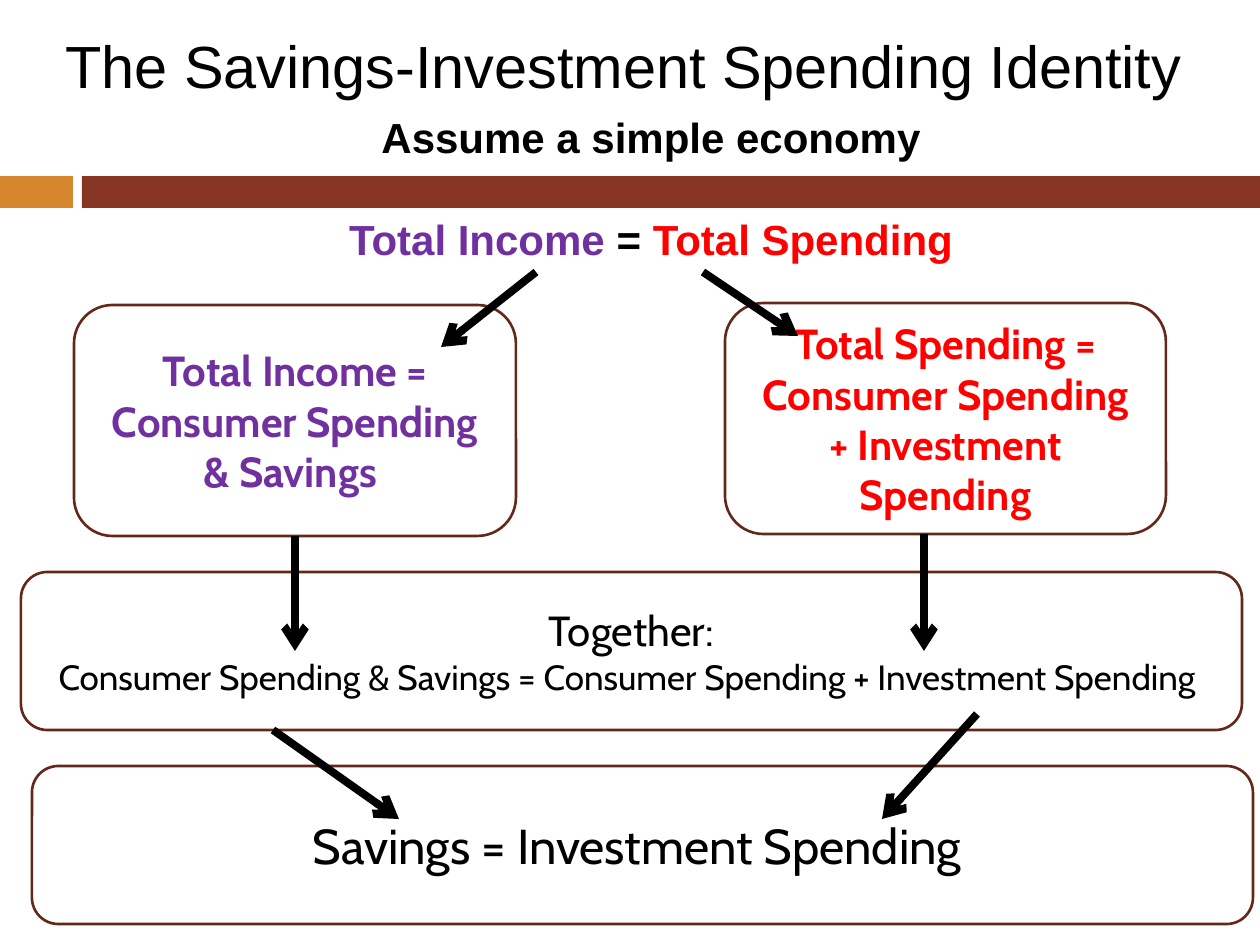
from lxml import etree
from pptx import Presentation
from pptx import util as u
from pptx.dml.color import RGBColor
from pptx.enum import shapes, text
from pptx.oxml.ns import qn

PX = 914400 / 126
COLORS = {"orange": "D6862D", "brown": "873624", "border": "64281B",
          "black": "000000", "purple": "7030A0", "red": "FF0000"}


def px(*values):
    """Turn pixel lengths into EMU."""
    return [u.Emu(round(v * PX)) for v in values]


def rgb(name):
    """Look up a named colour."""
    return RGBColor.from_string(COLORS[name])


def add_bar(s, box, color):
    """Add a plain filled band."""
    sp = s.shapes.add_shape(shapes.MSO_SHAPE.RECTANGLE, *px(*box))
    sp.shadow.inherit = False
    sp.fill.solid()
    sp.fill.fore_color.rgb = rgb(color)
    sp.line.fill.background()


def add_run(p, words, size, color="black", font="Arial", bold=False):
    """Add a formatted run to a paragraph."""
    r = p.add_run()
    r.text = words
    r.font.size, r.font.name, r.font.bold = u.Pt(size), font, bold
    r.font.color.rgb = rgb(color)


def add_text(s, box):
    """Add an empty wrapping text box and return its frame."""
    tf = s.shapes.add_textbox(*px(*box)).text_frame
    tf.word_wrap = True
    return tf


def add_title(s, box, words):
    """Add the slide heading."""
    tf = add_text(s, box)
    tf.vertical_anchor = text.MSO_ANCHOR.MIDDLE
    add_run(tf.paragraphs[0], words, 34)


def add_premise(s, box, lines):
    """Add the centred bold lines, each a list of words and colours."""
    tf = add_text(s, box)
    for i, line in enumerate(lines):
        p = tf.add_paragraph() if i else tf.paragraphs[0]
        p.alignment = text.PP_ALIGN.CENTER
        p.space_before = u.Pt(29.5)
        p._p.get_or_add_pPr().set("marL", str(px(74)[0]))
        for words, color in line:
            add_run(p, words, 24, color, bold=True)


def add_panel(s, box, lines, color="black", bold=False):
    """Add an outlined rounded panel with lines of words and sizes."""
    sp = s.shapes.add_shape(shapes.MSO_SHAPE.ROUNDED_RECTANGLE, *px(*box))
    sp.shadow.inherit = False
    sp.fill.background()
    sp.line.color.rgb = rgb("border")
    sp.line.width = u.Pt(1.5)
    tf = sp.text_frame
    tf.word_wrap = True
    tf.vertical_anchor = text.MSO_ANCHOR.MIDDLE
    for i, (words, size) in enumerate(lines):
        p = tf.add_paragraph() if i else tf.paragraphs[0]
        p.alignment = text.PP_ALIGN.CENTER
        add_run(p, words, size, color, "Cabin", bold)
    return sp


def add_arrow(s, start, end):
    """Add a thick black arrow."""
    cx = s.shapes.add_connector(shapes.MSO_CONNECTOR.STRAIGHT, *px(*start, *end))
    cx.line.color.rgb = rgb("black")
    cx.line.width = u.Pt(4.5)
    etree.SubElement(cx.line._get_or_add_ln(), qn("a:tailEnd"), type="arrow")
    etree.SubElement(cx._element.spPr, qn("a:effectLst"))
    return cx


def main():
    """Build the slide."""
    prs = Presentation()
    prs.slide_width, prs.slide_height = px(1260, 945)
    s = prs.slides.add_slide(prs.slide_layouts[6])

    add_bar(s, (0, 176, 73, 32), "orange")
    add_bar(s, (82, 176, 1178, 32), "brown")
    add_title(s, (53, -10, 1217, 150), "The Savings-Investment Spending Identity")
    income = add_panel(s, (74, 305, 442, 231),
                       [("Total Income = Consumer Spending & Savings ", 24)],
                       "purple", True)
    add_panel(s, (725, 303, 441, 231),
              [("Total Spending = Consumer Spending + Investment Spending", 24)],
              "red", True)
    add_premise(s, (220, 105, 788, 168), [
        [("Assume a simple economy", "black")],
        [("Total Income ", "purple"), ("= ", "black"), ("Total Spending", "red")]])
    add_panel(s, (21, 572, 1221, 158), [
        ("Together:", 24),
        ("Consumer Spending & Savings = Consumer Spending + Investment Spending ", 20)])
    add_panel(s, (32, 766, 1221, 158), [("Savings = Investment Spending ", 28)])

    for start, end in [((536, 272), (441, 347)), ((703, 272), (798, 336)),
                       ((924, 534), (924, 651)), ((977, 714), (882, 819)),
                       ((273, 730), (399, 819))]:
        add_arrow(s, start, end)
    add_arrow(s, (295, 536), (295, 651)).begin_connect(income, 2)
    prs.save("out.pptx")


if __name__ == "__main__":
    main()
